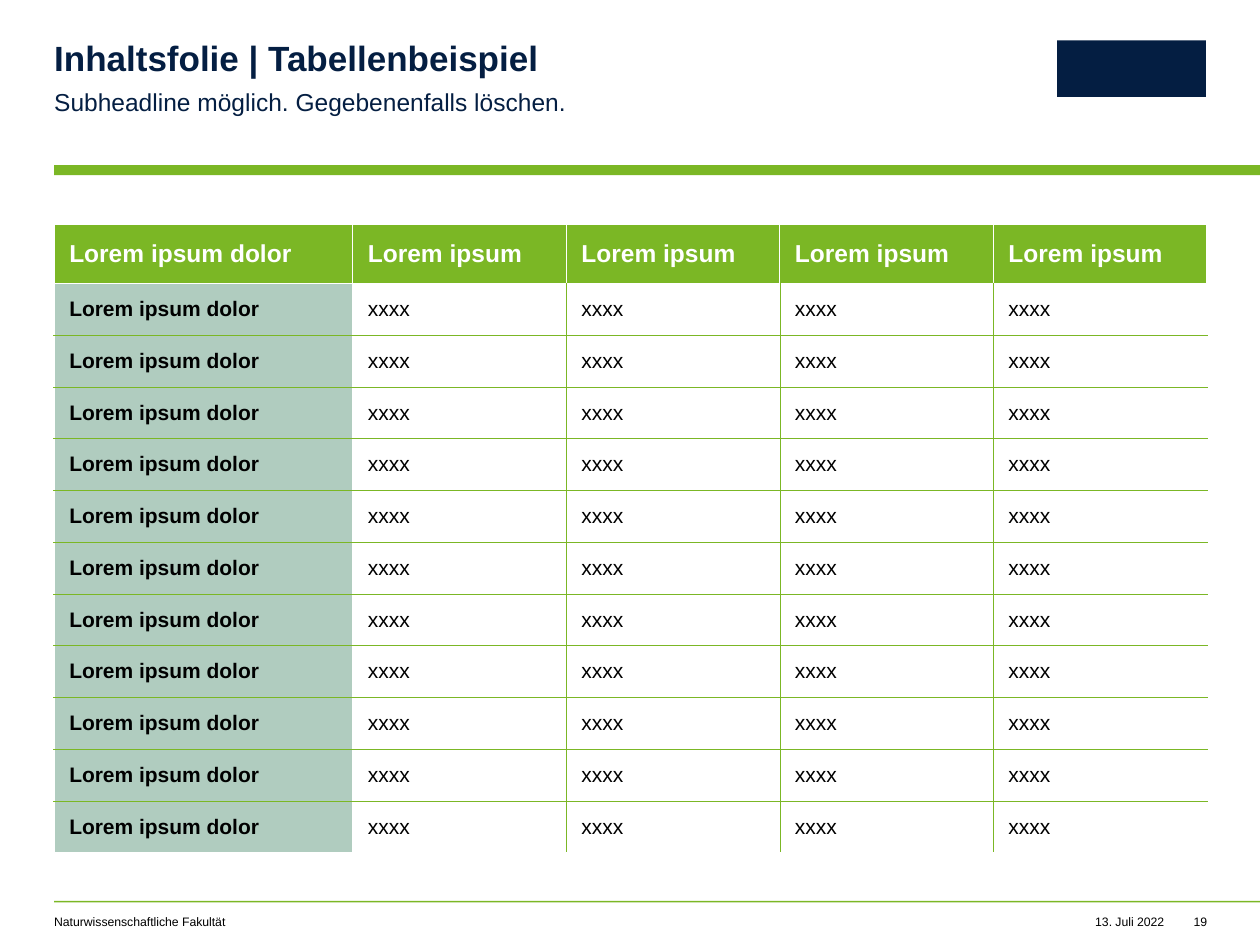
from lxml.etree import SubElement
from pptx import Presentation
from pptx.dml.color import RGBColor
from pptx.enum.shapes import MSO_SHAPE as Shape
from pptx.enum.text import MSO_ANCHOR as Anchor, MSO_AUTO_SIZE as AutoSize, PP_ALIGN as Align
from pptx.oxml.ns import qn
from pptx.util import Inches, Pt

GREEN, SAGE, NAVY, WHITE, BLACK = "7BB725", "B0CCBF", "041E42", "FFFFFF", "000000"
GRID_COLS, GRID_ROWS = 100, 75
LEFT, RIGHT = 4.3, 95.8
BODY_ROWS, VALUE_COLS = 11, 4


def rgb(code):
    return RGBColor.from_string(code)


class Deck:
    """Style and current slide; positions are columns and rows of a 100 x 75 grid."""

    def __init__(self, font="Arial"):
        self.font = font
        self.prs = Presentation()
        self.prs.slide_width, self.prs.slide_height = Inches(10), Inches(7.5)
        self.s = self.prs.slides.add_slide(self.prs.slide_layouts[1])

    def x(self, cols):
        return round(self.prs.slide_width * cols / GRID_COLS)

    def y(self, rows):
        return round(self.prs.slide_height * rows / GRID_ROWS)

    def box(self, left, top, width, height):
        return self.x(left), self.y(top), self.x(width), self.y(height)

    def run(self, p, text, size, color, bold=False):
        r = p.add_run()
        r.text = text
        r.font.name, r.font.size, r.font.bold = self.font, Pt(size), bold
        r.font.color.rgb = rgb(color)

    def fill_frame(self, sp, text, size, color, bold=False, align=Align.LEFT, right_inset=0):
        tf = sp.text_frame
        tf.word_wrap, tf.auto_size = True, AutoSize.SHAPE_TO_FIT_TEXT
        tf.vertical_anchor = Anchor.TOP
        tf.margin_left = tf.margin_top = tf.margin_bottom = 0
        tf.margin_right = self.x(right_inset)
        p = tf.paragraphs[0]
        p.alignment = align
        self.run(p, text, size, color, bold)
        return p

    def placeholder(self, idx, area, text, size, bold=False, spacing=1.0, after=0, right_inset=0):
        sp = self.s.placeholders[idx]
        sp.left, sp.top, sp.width, sp.height = self.box(*area)
        p = self.fill_frame(sp, text, size, NAVY, bold, right_inset=right_inset)
        p.line_spacing, p.space_before, p.space_after = spacing, Pt(0), Pt(after)
        pPr = p._p.get_or_add_pPr()
        pPr.set("marL", "0")
        pPr.set("indent", "0")
        SubElement(pPr, qn("a:buNone"))

    def text(self, area, text, size, align=Align.LEFT):
        sp = self.s.shapes.add_textbox(*self.box(*area))
        self.fill_frame(sp, text, size, BLACK, align=align)

    def bar(self, area, color):
        sp = self.s.shapes.add_shape(Shape.RECTANGLE, *self.box(*area))
        sp.shadow.inherit = False
        sp.fill.solid()
        sp.fill.fore_color.rgb = rgb(color)
        sp.line.fill.background()

    def cell(self, cell, text, size, color, bold, fill, borders):
        """Borders map a side (L, R, T, B) to a colour and a width in points."""
        cell.vertical_anchor = Anchor.MIDDLE
        cell.margin_left = cell.margin_right = self.x(1.2)
        cell.margin_top = cell.margin_bottom = self.y(0.4)
        self.run(cell.text_frame.paragraphs[0], text, size, color, bold)
        tcPr = cell._tc.get_or_add_tcPr()
        for side in "LRTB":
            if side in borders:
                line_color, width = borders[side]
                ln = SubElement(tcPr, qn(f"a:ln{side}"), w=str(Pt(width)))
                solid = SubElement(ln, qn("a:solidFill"))
                SubElement(solid, qn("a:srgbClr"), val=line_color)
        if fill:
            cell.fill.solid()
            cell.fill.fore_color.rgb = rgb(fill)
        else:
            cell.fill.background()

    def table(self, area, rows, first_col, header_row):
        n_rows, n_cols = len(rows), len(rows[0])
        _, _, width, height = area
        tbl = self.s.shapes.add_table(n_rows, n_cols, *self.box(*area)).table
        tbl.first_row = tbl.horz_banding = False
        for j, col in enumerate(tbl.columns):
            col.width = self.x((width - first_col) / (n_cols - 1) if j else first_col)
        for i, row in enumerate(tbl.rows):
            row.height = self.y((height - header_row) / (n_rows - 1) if i else header_row)
        for i, texts in enumerate(rows):
            for j, text in enumerate(texts):
                borders = cell_borders(i, j, n_rows, n_cols)
                if i == 0:
                    look = 14, WHITE, True, GREEN
                elif j == 0:
                    look = 12, BLACK, True, SAGE
                else:
                    look = 12, BLACK, False, None
                self.cell(tbl.cell(i, j), text, *look, borders)


def cell_borders(i, j, n_rows, n_cols):
    """White lines around the header and first column, thin green ones elsewhere."""
    thin, white = (GREEN, 0.25), (WHITE, 1)
    inner = (WHITE, 0.5) if i == 0 else thin
    borders = {"L": white if j == 0 or (i and j == 1) else inner}
    if j < n_cols - 1:
        borders["R"] = white if i and j == 0 else inner
    if i != 1:
        borders["T"] = thin if i else white
    if 0 < i < n_rows - 1:
        borders["B"] = thin
    return borders


def main():
    deck = Deck()
    deck.bar((LEFT, 13.1, GRID_COLS - LEFT, 0.8), GREEN)
    deck.bar((LEFT, 71.5, GRID_COLS - LEFT, 0.13), GREEN)
    deck.bar((83.9, 3.2, 11.8, 4.5), NAVY)

    deck.text((85.3, 72.6, 7.1, 1.2), "13. Juli 2022", 7, Align.RIGHT)
    deck.text((LEFT, 72.6, 44.9, 1.2), "Naturwissenschaftliche Fakultät", 7)
    deck.text((93.8, 72.6, 2, 1.2), "19", 7, Align.RIGHT)

    deck.placeholder(0, (LEFT, 3.3, 56.1, 3), "Inhaltsfolie | Tabellenbeispiel", 20,
                     bold=True, spacing=0.9)
    deck.placeholder(1, (LEFT, 6.7, 56.1, 2.4), "Subheadline möglich. Gegebenenfalls löschen.", 14,
                     spacing=1.1, after=8, right_inset=3.9)

    header = ["Lorem ipsum dolor"] + ["Lorem ipsum"] * VALUE_COLS
    body = [["Lorem ipsum dolor"] + ["xxxx"] * VALUE_COLS] * BODY_ROWS
    deck.table((LEFT, 17.8, RIGHT - LEFT, 49.9), [header] + body, first_col=23.7, header_row=4.7)
    deck.prs.save("out.pptx")


if __name__ == "__main__":
    main()
